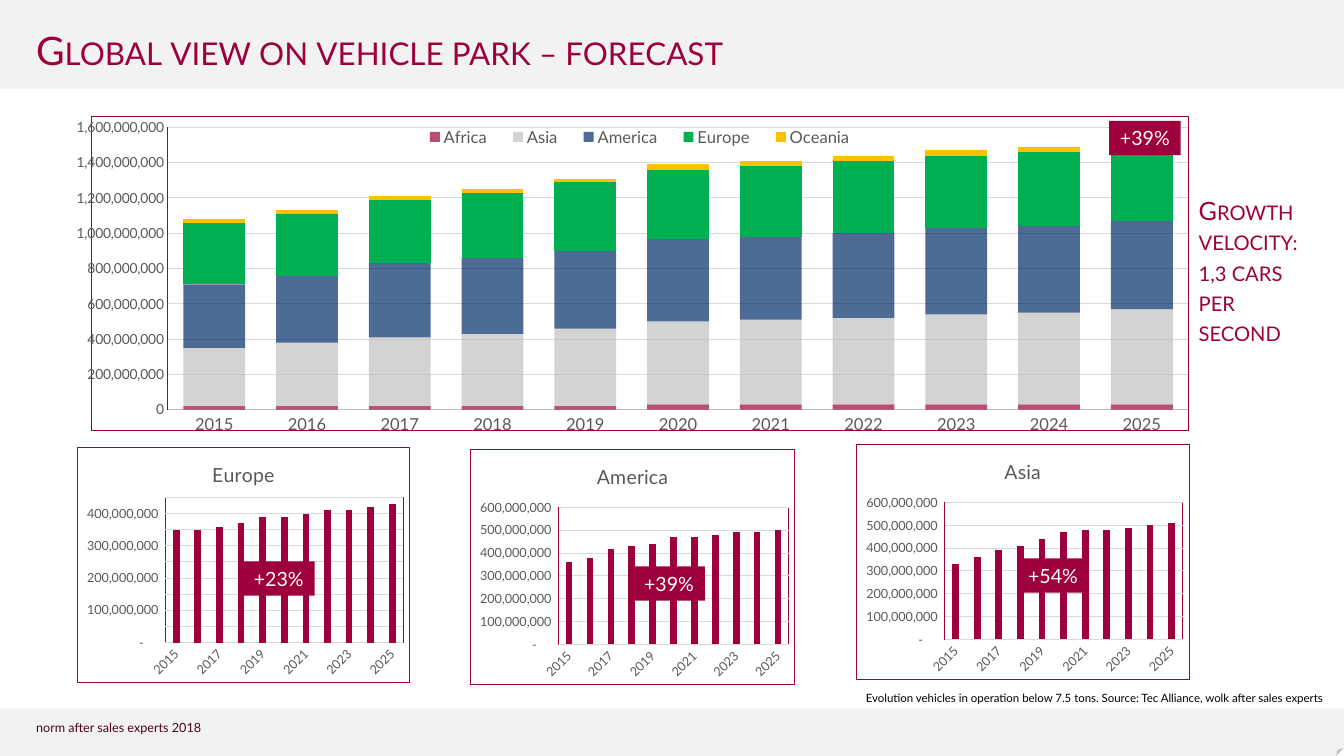
from lxml import etree
from pptx import Presentation
from pptx.chart.data import CategoryChartData
from pptx.dml.color import RGBColor
from pptx.enum.chart import XL_CHART_TYPE, XL_LEGEND_POSITION, XL_TICK_MARK
from pptx.enum.shapes import MSO_SHAPE
from pptx.enum.text import MSO_ANCHOR, PP_ALIGN
from pptx.oxml import parse_xml
from pptx.oxml.ns import nsdecls, qn
from pptx.util import Inches, Pt

STACKED, CLUSTERED = XL_CHART_TYPE.COLUMN_STACKED, XL_CHART_TYPE.COLUMN_CLUSTERED
RECT, FOLDED = MSO_SHAPE.RECTANGLE, MSO_SHAPE.FOLDED_CORNER
NO_TICK, LEGEND_BOTTOM = XL_TICK_MARK.NONE, XL_LEGEND_POSITION.BOTTOM
TOP, MIDDLE, BOTTOM = MSO_ANCHOR.TOP, MSO_ANCHOR.MIDDLE, MSO_ANCHOR.BOTTOM
LEFT, CENTER = PP_ALIGN.LEFT, PP_ALIGN.CENTER
FONT = "Lato"
COLORS = {"brand": "9D003C", "band": "F2F2F2", "footer": "4E001E", "text": "595959",
          "grid": "D9D9D9", "axis": "BFBFBF", "black": "000000", "white": "FFFFFF",
          "asia": "C1C1C1", "america": "002D69", "europe": "00B050", "oceania": "FFC000"}
RGB = {name: RGBColor.from_string(value) for name, value in COLORS.items()}
MILLION = 1_000_000
YEARS = [str(year) for year in range(2015, 2026)]
SMALL = [20] * 5 + [30] * 6
AMERICA = [360, 380, 420, 430, 440, 470, 470, 480, 490, 490, 500]
EUROPE = [350, 350, 360, 370, 390, 390, 400, 410, 410, 420, 430]

prs = Presentation()
prs.slide_width, prs.slide_height = Inches(13.33), Inches(7.5)
s = prs.slides.add_slide(prs.slide_layouts[6])


def write(sp, lines, size, color, anchor=TOP, align=LEFT, caps="none"):
    tf = sp.text_frame
    tf.word_wrap = True
    tf.vertical_anchor = anchor
    tf.text = "\n".join(lines)
    for p in tf.paragraphs:
        p.alignment = align
        for r in p.runs:
            r.font.name, r.font.size, r.font.color.rgb = FONT, Pt(size), RGB[color]
            r._r.get_or_add_rPr().set("cap", caps)


def add_columns(box, kind, series, gap, overlap, cat_size, val_size, val_format, top, step):
    data = CategoryChartData()
    data.categories = YEARS
    for name, values, color, alpha in series:
        data.add_series(name, [value * MILLION for value in values])
    chart = s.shapes.add_chart(kind, *box, data).chart
    chart.font.name, chart.font.size, chart.font.color.rgb = FONT, Pt(10), RGB["text"]
    plot = chart.plots[0]
    plot.gap_width, plot.overlap, plot.vary_by_categories = gap, overlap, False
    for bars, (name, values, color, alpha) in zip(plot.series, series):
        bars.format.fill.solid()
        bars.format.fill.fore_color.rgb = RGB[color]
        if alpha < 100:
            fill = bars._element.find(".//" + qn("a:srgbClr"))
            etree.SubElement(fill, qn("a:alpha")).set("val", str(alpha * 1000))
    for axis, size in ((chart.category_axis, cat_size), (chart.value_axis, val_size)):
        axis.major_tick_mark = axis.minor_tick_mark = NO_TICK
        font = axis.tick_labels.font
        font.name, font.size, font.color.rgb = FONT, Pt(size), RGB["text"]
        axis.format.line.width = Pt(0.75)
    val = chart.value_axis
    val.minimum_scale, val.maximum_scale, val.major_unit = 0, top * MILLION, step * MILLION
    val.tick_labels.number_format = val_format
    val.tick_labels.number_format_is_linked = False
    val.major_gridlines.format.line.color.rgb = RGB["grid"]
    val.major_gridlines.format.line.width = Pt(0.75)
    border = (f'<c:spPr {nsdecls("c", "a")}><a:noFill/><a:ln w="9525"><a:solidFill>'
              f'<a:srgbClr val="{COLORS["brand"]}"/></a:solidFill></a:ln></c:spPr>')
    chart._chartSpace.chart.addnext(parse_xml(border))
    if kind == CLUSTERED:
        chart._chartSpace.chart.plotArea.append(parse_xml(border))
    return chart


W, H = prs.slide_width / 100, prs.slide_height / 100

for preset, y, h in ((RECT, 0, 11.73), (FOLDED, 93.73, 6.27)):
    sp = s.shapes.add_shape(preset, 0, int(y * H), prs.slide_width, int(h * H))
    sp.shadow.inherit = False
    sp.fill.solid()
    sp.fill.fore_color.rgb = RGB["band"]
    sp.line.fill.background()

texts = [
    (1.95, 94.53, 36.76, 3.33, ["norm after sales experts 2018"], 9, "footer", TOP, "none"),
    (1.95, 1.2, 90.02, 9.2, ["Global view on vehicle park – forecast"], 28, "brand", BOTTOM, "small"),
    (63.69, 90.8, 36.31, 3.2,
     ["Evolution vehicles in operation below 7.5 tons. Source: Tec Alliance, wolk after sales experts"],
     8.2, "black", TOP, "none"),
    (88.45, 25.2, 10.58, 17.47, ["Growth velocity:", "1,3 cars per second"], 18, "brand", TOP, "small"),
]
for x, y, w, h, lines, size, color, anchor, caps in texts:
    sp = s.shapes.add_textbox(int(x * W), int(y * H), int(w * W), int(h * H))
    write(sp, lines, size, color, anchor, caps=caps)

regions = [
    ("Africa", SMALL, "brand", 70),
    ("Asia", [330, 360, 390, 410, 440, 470, 480, 490, 510, 520, 540], "asia", 70),
    ("America", AMERICA, "america", 70),
    ("Europe", EUROPE, "europe", 100),
    ("Oceania", SMALL, "oceania", 100),
]
box = int(5.7 * W), int(15.33 * H), int(82.75 * W), int(42 * H)
chart = add_columns(box, STACKED, regions, 50, 100, 12, 10, "#,##0", 1600, 200)
chart.has_title = False
chart.category_axis.format.line.color.rgb = RGB["axis"]
chart.value_axis.format.line.color.rgb = RGB["brand"]
chart.has_legend = True
legend = chart.legend
legend.position, legend.include_in_layout = LEGEND_BOTTOM, False
legend.font.name, legend.font.size, legend.font.color.rgb = FONT, Pt(12), RGB["text"]
plot_area = chart._chartSpace.chart.plotArea
for old in plot_area.findall(qn("c:layout")):
    plot_area.remove(old)
layouts = [
    ('<c:layoutTarget val="inner"/>', (0.07, 0.035, 0.93, 0.9)),
    ("", (0.29, 0.02, 0.42, 0.09)),
]
plot_layout, legend_layout = [
    parse_xml(f'<c:layout {nsdecls("c")}><c:manualLayout>{target}'
              '<c:xMode val="edge"/><c:yMode val="edge"/>'
              + "".join(f'<c:{key} val="{value}"/>' for key, value in zip("xywh", shares))
              + "</c:manualLayout></c:layout>")
    for target, shares in layouts]
plot_area.insert(0, plot_layout)
for old in legend._element.findall(qn("c:layout")):
    legend._element.remove(old)
legend._element.find(qn("c:legendPos")).addnext(legend_layout)

ACCOUNTING = '_ * #,##0_ ;_ * \\-#,##0_ ;_ * "-"??_ ;_ '
minis = [
    ("Europe", 5.7, 59.07, 24.83, EUROPE, 450, 50),
    ("America", 34.96, 59.33, 24.23, AMERICA, 600, 100),
    ("Asia", 63.69, 58.67, 24.83,
     [330, 360, 390, 410, 440, 470, 480, 480, 490, 500, 510], 600, 100),
]
for name, x, y, w, values, top, step in minis:
    box = int(x * W), int(y * H), int(w * W), int(31.33 * H)
    chart = add_columns(box, CLUSTERED, [(name, values, "brand", 100)],
                        219, -27, 9, 9, ACCOUNTING, top, step)
    chart.has_legend = False
    chart.has_title = True
    chart.chart_title.include_in_layout = False
    p = chart.chart_title.text_frame.paragraphs[0]
    p.text = name
    font = p.runs[0].font
    font.name, font.size, font.bold, font.color.rgb = FONT, Pt(14), False, RGB["text"]
    chart.category_axis.format.line.color.rgb = RGB["grid"]
    chart.value_axis.format.line.fill.background()
    chart.category_axis._element.find(".//" + qn("a:bodyPr")).set("rot", "-2700000")

badges = [("+23%", 18.08, 74.27), ("+39%", 47.11, 74.93),
          ("+54%", 75.69, 73.87), ("+39%", 82.52, 16)]
for growth, x, y in badges:
    sp = s.shapes.add_shape(RECT, int(x * W), int(y * H), int(5.33 * W), int(4.53 * H))
    sp.shadow.inherit = False
    sp.fill.solid()
    sp.fill.fore_color.rgb = RGB["brand"]
    sp.line.fill.background()
    write(sp, [growth], 14, "white", MIDDLE, CENTER)

prs.save("out.pptx")
